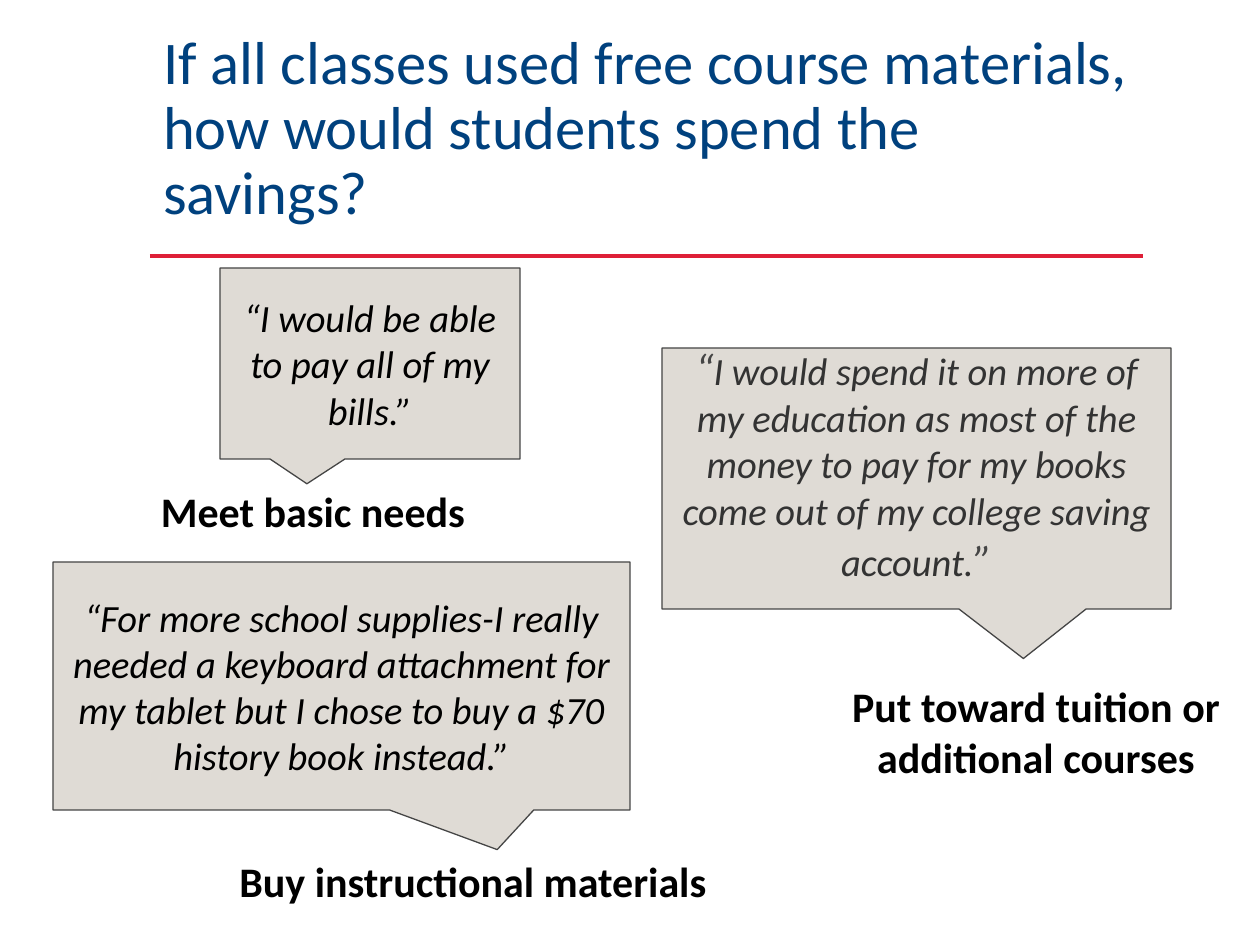
from pptx import Presentation
from pptx.dml.color import RGBColor
from pptx.enum.shapes import MSO_CONNECTOR, MSO_SHAPE
from pptx.enum.text import MSO_ANCHOR, MSO_AUTO_SIZE, PP_ALIGN
from pptx.oxml.ns import qn
from pptx.util import Pt
from lxml import etree

NAVY = RGBColor(0x00, 0x41, 0x7E)
RED = RGBColor(0xDE, 0x1F, 0x37)
SAND = RGBColor(0xDF, 0xDB, 0xD5)
GRAY = RGBColor(0x45, 0x45, 0x45)
DARK = RGBColor(0x33, 0x33, 0x33)
BLACK = RGBColor(0x00, 0x00, 0x00)
LEFT, CENTER = PP_ALIGN.LEFT, PP_ALIGN.CENTER
TOP, MIDDLE, BOTTOM = MSO_ANCHOR.TOP, MSO_ANCHOR.MIDDLE, MSO_ANCHOR.BOTTOM
NO_FIT = MSO_AUTO_SIZE.NONE
BUBBLE = MSO_SHAPE.ROUNDED_RECTANGULAR_CALLOUT
STRAIGHT = MSO_CONNECTOR.STRAIGHT
SCALE = 914400 / 126


def px(num):
    """Turn px into EMU."""
    return round(num * SCALE)


def put(item, form):
    """Set each format value on the item."""
    for name, value in form.items():
        setattr(item, name, value)


class Deck:
    """Holds the style and the current slide."""

    font = "Calibri"
    head = {"size": Pt(34.6)}
    quote = {"size": Pt(22), "italic": True}
    mark = {"size": Pt(25), "italic": True}
    label = {"size": Pt(24), "bold": True}

    def __init__(self, wide, high):
        """Start a deck with one title slide."""
        self.show = Presentation()
        put(self.show, {"slide_width": px(wide), "slide_height": px(high)})
        self.slide = self.show.slides.add_slide(self.show.slide_layouts[5])

    def words(self, shape, runs, anchor, align, pad, **para):
        """Fill a shape with one paragraph of (text, form, color) runs."""
        frame = shape.text_frame
        sides = ("margin_left", "margin_top", "margin_right", "margin_bottom")
        put(frame, dict(zip(sides, map(px, pad))))
        put(frame, {"word_wrap": True, "auto_size": NO_FIT,
                    "vertical_anchor": anchor})
        line = frame.paragraphs[0]
        put(line, {"alignment": align, **para})
        for text, form, color in runs:
            run = line.add_run()
            run.text = text
            put(run.font, {"name": self.font, **form})
            run.font.color.rgb = color

    def title(self, box, text):
        """Place the title."""
        shape = self.slide.shapes.title
        put(shape, dict(zip(("left", "top", "width", "height"), map(px, box))))
        self.words(shape, [(text, self.head, NAVY)], BOTTOM, LEFT,
                   (13, 6, 13, 6), line_spacing=0.9)

    def rule(self, left, right, y):
        """Draw the red rule."""
        line = self.slide.shapes.add_connector(
            STRAIGHT, px(left), px(y), px(right), px(y))
        line.line.color.rgb = RED
        line.line.width = Pt(2.5)
        etree.SubElement(line._element.spPr, qn("a:effectLst"))

    def bubble(self, box, tip, runs, base=13, **para):
        """Draw a square callout with a quote."""
        shape = self.slide.shapes.add_shape(BUBBLE, *map(px, box))
        for spot, value in enumerate((*tip, 0)):
            shape.adjustments[spot] = value
        shape.shadow.inherit = False
        shape.fill.solid()
        shape.fill.fore_color.rgb = SAND
        shape.line.color.rgb = GRAY
        shape.line.width = Pt(0.75)
        self.words(shape, runs, MIDDLE, CENTER, (13, 13, 13, base), **para)

    def tag(self, box, text):
        """Place a bold label."""
        shape = self.slide.shapes.add_textbox(*map(px, box))
        self.words(shape, [(text, self.label, BLACK)], TOP, CENTER, (13,) * 4)


def main():
    """Build the slide."""
    deck = Deck(1260, 945)
    deck.rule(150, 1143, 256)
    deck.title((150, 111, 993, 123), "If all classes used free course "
               "materials, how would students spend the savings?")
    deck.bubble((662, 348, 509, 261), (0.21, 0.69), [
        ("“", deck.mark, GRAY),
        ("I would spend it on more of my education as most of the money to "
         "pay for my books come out of my college saving account.",
         deck.quote, DARK),
        ("”", deck.mark, GRAY),
    ], base=43, space_before=Pt(7.5))
    plain = (
        ((53, 562, 577, 248), (0.27, 0.66),
         "“For more school supplies-I really needed a keyboard attachment "
         "for my tablet but I chose to buy a $70 history book instead.”"),
        ((220, 268, 300, 191), (-0.21, 0.63),
         "“I would be able to pay all of my bills.”"),
    )
    for box, tip, text in plain:
        deck.bubble(box, tip, [(text, deck.quote, BLACK)])
    tags = (
        ((107, 473, 412, 77), "Meet basic needs"),
        ((835, 668, 402, 178), "Put toward tuition or additional courses"),
        ((150, 843, 646, 77), "Buy instructional materials"),
    )
    for box, text in tags:
        deck.tag(box, text)
    deck.show.save("out.pptx")


if __name__ == "__main__":
    main()
